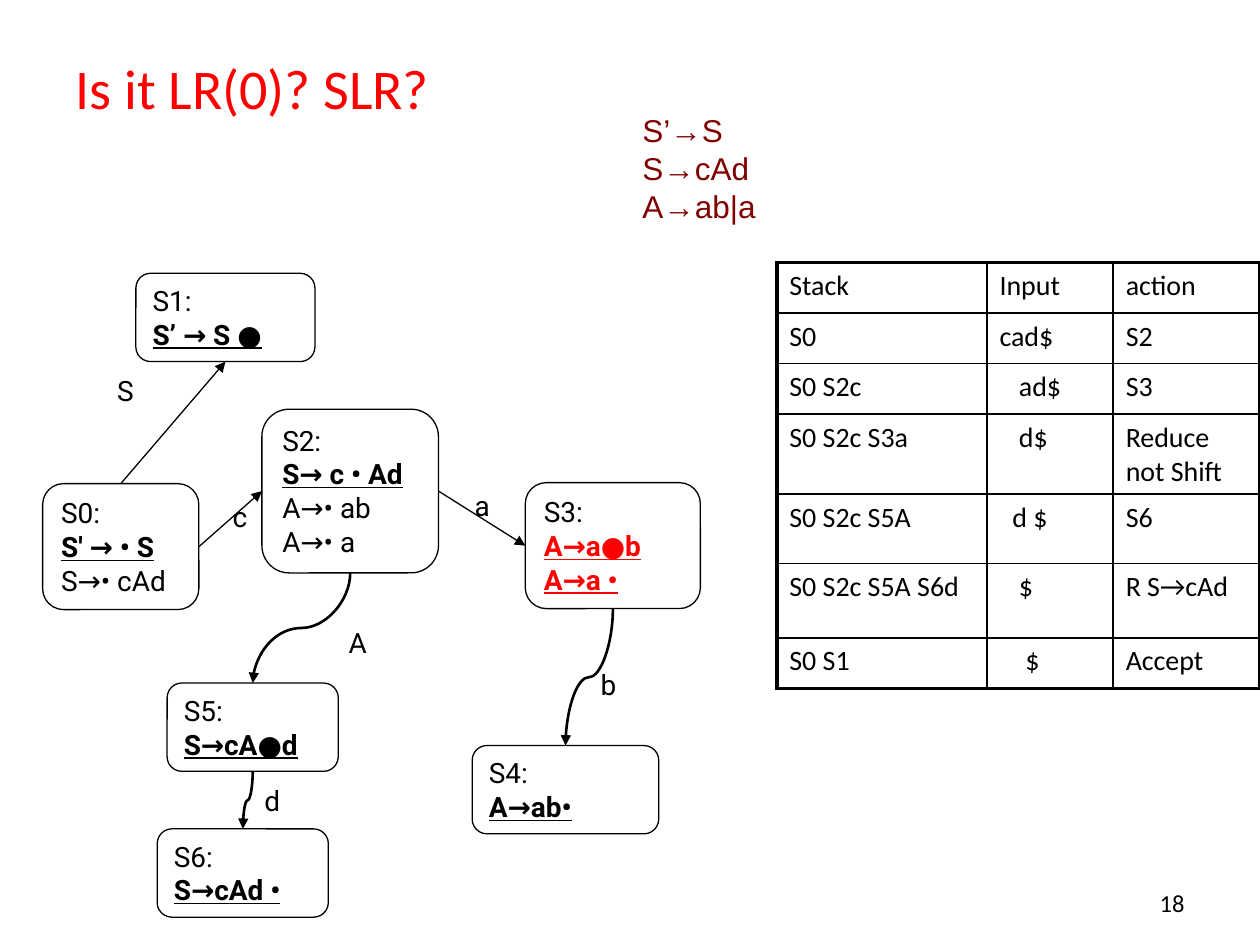
from lxml.etree import SubElement as Sub
from pptx import Presentation as Deck
from pptx.dml.color import RGBColor as Rgb
from pptx.enum.shapes import MSO_CONNECTOR as Link, MSO_SHAPE as Form
from pptx.enum.text import MSO_ANCHOR as Anchor, PP_ALIGN as Align
from pptx.oxml.ns import qn
from pptx.util import Cm, Pt

BLACK, RED, MAROON = "000000", "FF0000", "800000"
TOP, LEFT, BASE, RIGHT = range(4)

NODES = {
    "S0": ((0, 4.24, 3.15, 2.54), ["S' → • S"], ["S→• cAd"], BLACK),
    "S1": ((1.88, 0, 3.61, 1.78), ["S’ → S ●"], [], BLACK),
    "S2": ((4.42, 2.74, 3.56, 3.3), ["S→ c • Ad"], ["A→• ab", "A→• a"], BLACK),
    "S3": ((9.73, 4.22, 3.53, 2.54), ["A→a●b", "A→a •"], [], RED),
    "S4": ((8.66, 9.52, 3.76, 1.78), ["A→ab•"], [], BLACK),
    "S5": ((2.51, 8.26, 3.45, 1.78), ["S→cA●d"], [], BLACK),
    "S6": ((2.31, 11.2, 3.45, 1.78), ["S→cAd •"], [], BLACK),
}
ARCS = [
    ("S0", TOP, "S1", BASE, "S", (1.25, 1.9)),
    ("S0", RIGHT, "S2", LEFT, "c", (3.58, 4.44)),
    ("S2", RIGHT, "S3", LEFT, "a", (8.46, 4.22)),
    ("S2", BASE, "S5", TOP, "A", (5.92, 6.98)),
    ("S3", BASE, "S4", TOP, "b", (11, 7.82)),
    ("S5", BASE, "S6", TOP, "d", (4.22, 10.16)),
]
ROWS = [
    (1.02, "Stack", "Input", 0, "action"),
    (1.02, "S0", "cad$", 0, "S2"),
    (1.02, "S0 S2c", "ad$", 3, "S3"),
    (1.5, "S0 S2c S3a", "d$", 3, "Reduce not Shift"),
    (1.4, "S0 S2c S5A", "d $", 2, "S6"),
    (1.5, "S0 S2c S5A S6d", "$", 3, "R S→cAd"),
    (1.02, "S0 S1", "$", 4, "Accept"),
]
COLS = [4.24, 2.54, 2.96]


def tint(code):
    return Rgb.from_string(code)


def scale(box):
    return [Cm(size) for size in box]


def put(frame, text, font="Roboto", size=16, ink=BLACK, strong=False,
        align=Align.LEFT, gap=0):
    para = frame.add_paragraph() if frame.text else frame.paragraphs[0]
    para.alignment = align
    para.space_before = Pt(gap)
    run = para.add_run()
    run.text = text
    run.font.name, run.font.size = font, Pt(size)
    run.font.color.rgb = tint(ink)
    run.font.bold = run.font.underline = strong


def note(slide, box, lines, **style):
    frame = slide.shapes.add_textbox(*scale(box)).text_frame
    frame.word_wrap = True
    for line in lines:
        put(frame, line, **style)


def head(slide, box, text):
    title = slide.shapes.title
    title.left, title.top, title.width, title.height = scale(box)
    title.text_frame.vertical_anchor = Anchor.MIDDLE
    put(title.text_frame, text, font="Calibri", size=32, ink=RED)


def node(slide, box, name, core, rest, ink):
    shape = slide.shapes.add_shape(Form.ROUNDED_RECTANGLE, *scale(box))
    shape.shadow.inherit = False
    shape.fill.background()
    shape.line.color.rgb = tint(BLACK)
    shape.line.width = Pt(0.75)
    frame = shape.text_frame
    frame.vertical_anchor = Anchor.TOP
    put(frame, name + ":")
    for line in core:
        put(frame, line, ink=ink, strong=True)
    for line in rest:
        put(frame, line)
    return shape


def turn(link):
    wide, high = link.width, link.height
    link.left += (wide - high) // 2
    link.top += (high - wide) // 2
    link.width, link.height = high, wide
    frame = link._element.spPr.find(qn("a:xfrm"))
    frame.attrib.pop("flipH", None)
    frame.set("rot", "5400000")


def arc(slide, start, side, end, goal):
    bent = side == BASE
    link = slide.shapes.add_connector(
        Link.CURVE if bent else Link.STRAIGHT, 0, 0, 0, 0)
    link.begin_connect(start, side)
    link.end_connect(end, goal)
    if bent:
        turn(link)
    link.line.color.rgb = tint(BLACK)
    link.line.width = Pt(1.5 if bent else 0.75)
    Sub(link.line._get_or_add_ln(), qn("a:tailEnd"), type="triangle")
    Sub(link._element.spPr, qn("a:effectLst"))


def graph(slide, left, top):
    made = {}
    for name, ((x, y, wide, high), core, rest, ink) in NODES.items():
        box = left + x, top + y, wide, high
        made[name] = node(slide, box, name, core, rest, ink)
    for start, side, end, goal, mark, (x, y) in ARCS:
        arc(slide, made[start], side, made[end], goal)
        note(slide, (left + x, top + y, 1.85, 0.94), [mark])


def edge(cell, tag, width):
    line = Sub(cell._tc.get_or_add_tcPr(), qn("a:" + tag), w=str(Pt(width)))
    fill = Sub(line, qn("a:solidFill"))
    Sub(fill, qn("a:srgbClr"), val=BLACK)


def trace(slide, left, top):
    box = left, top, sum(COLS), sum(row[0] for row in ROWS)
    grid = slide.shapes.add_table(len(ROWS), len(COLS), *scale(box)).table
    grid.first_row = grid.horz_banding = False
    for col, wide in zip(grid.columns, COLS):
        col.width = Cm(wide)
    for r, (high, stack, feed, shift, move) in enumerate(ROWS):
        grid.rows[r].height = Cm(high)
        for c, text in enumerate((stack, feed, move)):
            cell = grid.cell(r, c)
            rims = {"lnL": c == 0, "lnR": c == len(COLS) - 1,
                    "lnT": r == 0, "lnB": r == len(ROWS) - 1}
            for tag, rim in rims.items():
                edge(cell, tag, 2.25 if rim else 1)
            cell.fill.background()
            if c == 1:
                cell.margin_left = Cm(0.25 + 0.13 * shift)
            put(cell.text_frame, text, font="Calibri", gap=3.2)


def main():
    deck = Deck()
    deck.slide_width, deck.slide_height = Cm(25.4), Cm(19.05)
    slide = deck.slides.add_slide(deck.slide_layouts[5])
    head(slide, (1.27, 0.76, 22.86, 1.98), "Is it LR(0)? SLR?")
    note(slide, (12.7, 2.12, 12.7, 2.54), ["S’→S", "S→cAd", "A→ab|a"],
         font="Arial", size=18, ink=MAROON)
    graph(slide, 0.86, 5.51)
    trace(slide, 15.66, 5.29)
    note(slide, (18.2, 17.78, 5.93, 0.89), ["18"],
         font="Calibri", size=14, align=Align.RIGHT)
    deck.save("out.pptx")


if __name__ == "__main__":
    main()
